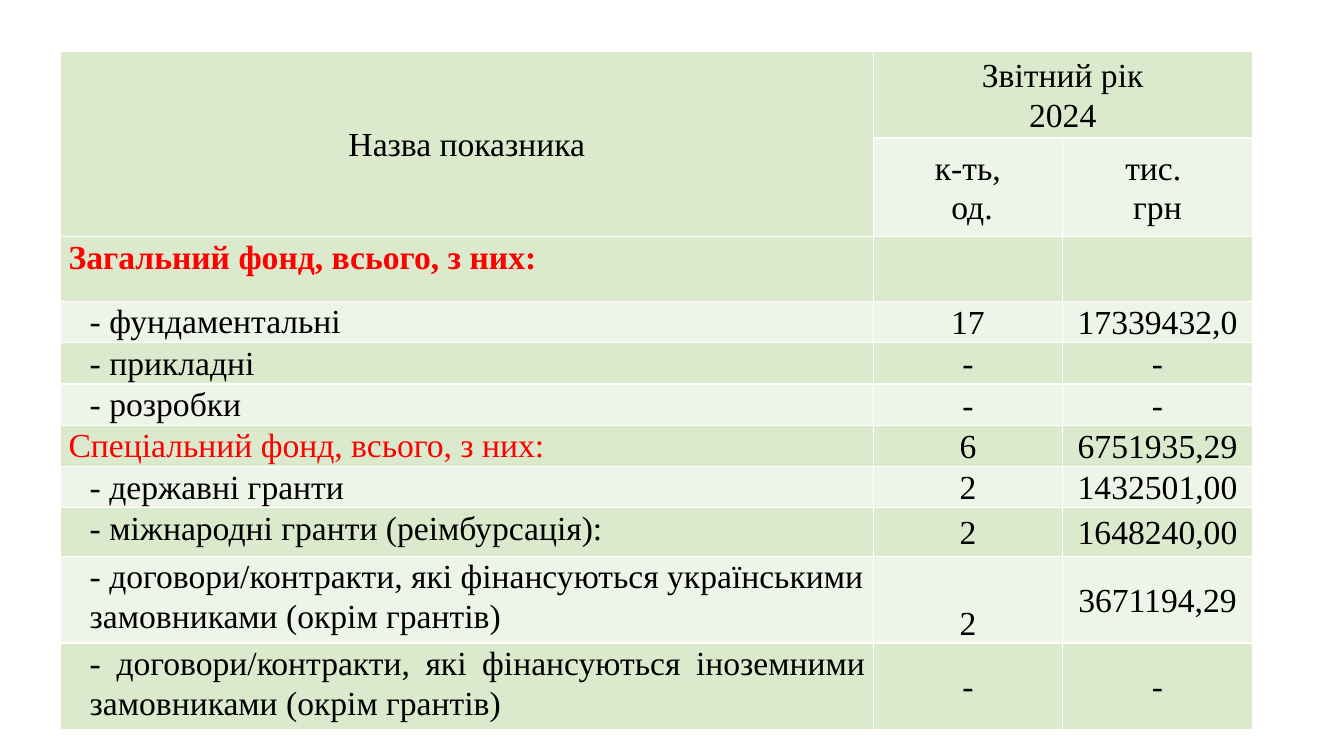
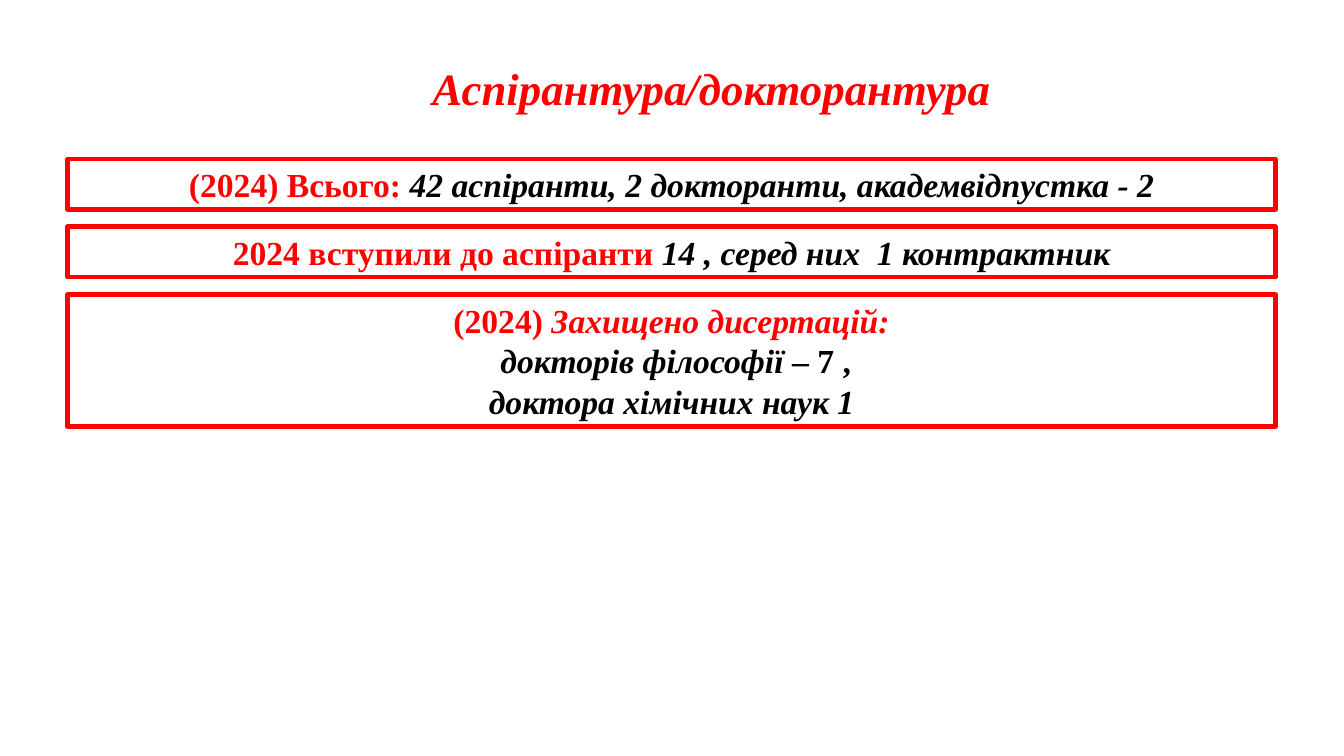
from lxml.etree import SubElement
from pptx import Presentation
from pptx.dml.color import RGBColor
from pptx.enum.shapes import MSO_SHAPE
from pptx.enum.text import MSO_ANCHOR, PP_ALIGN
from pptx.oxml.ns import qn
from pptx.util import Inches, Pt

COLORS = {"text": "000000", "accent": "FF0000", "border": "FFFFFF",
          "dark": "DBE9CD", "light": "EEF4E8"}
CENTER, LEFT, JUSTIFY = PP_ALIGN.CENTER, PP_ALIGN.LEFT, PP_ALIGN.JUSTIFY


def rgb(name):
    return RGBColor.from_string(COLORS[name])


class Deck:
    """Holds the shared style and the current slide."""
    font = "Times New Roman"
    size = 24

    def __init__(self):
        self.prs = Presentation()
        self.prs.slide_width, self.prs.slide_height = Inches(13.33), Inches(7.5)
        self.s = None

    def new_slide(self):
        self.s = self.prs.slides.add_slide(self.prs.slide_layouts[6])

    def add_text(self, tf, paragraphs, align=CENTER, size=None, spacing=None):
        """Each paragraph is a list of (text, color, style); style holds b and i."""
        for n, runs in enumerate(paragraphs):
            p = tf.paragraphs[0] if n == 0 else tf.add_paragraph()
            p.alignment = align
            if spacing:
                p.line_spacing = spacing
            for text, color, style in runs:
                r = p.add_run()
                r.text = text
                r.font.name, r.font.size = self.font, Pt(size or self.size)
                r.font.color.rgb = rgb(color)
                r.font.bold, r.font.italic = "b" in style, "i" in style

    def title(self, text, left, top, width, height):
        sp = self.s.shapes.add_textbox(*map(Inches, (left, top, width, height)))
        sp.text_frame.word_wrap = False
        self.add_text(sp.text_frame, [[(text, "accent", "bi")]], LEFT, size=32)

    def box(self, paragraphs, left, top, width, height):
        sp = self.s.shapes.add_shape(
            MSO_SHAPE.RECTANGLE, *map(Inches, (left, top, width, height)))
        sp.shadow.inherit = False
        sp.fill.background()
        sp.line.color.rgb = rgb("accent")
        sp.line.width = Pt(3.25)
        sp.text_frame.word_wrap = True
        self.add_text(sp.text_frame, paragraphs)

    def table(self, left, top, widths, heights):
        """Adds an empty table with banded rows and white borders."""
        frame = self.s.shapes.add_table(
            len(heights), len(widths), Inches(left), Inches(top),
            Inches(sum(widths)), Inches(sum(heights)))
        table = frame.table
        table.first_row = table.horz_banding = False
        for column, width in zip(table.columns, widths):
            column.width = Inches(width)
        for n, (row, height) in enumerate(zip(table.rows, heights)):
            row.height = Inches(height)
            for cell in row.cells:
                self.borders(cell)
                cell.fill.solid()
                cell.fill.fore_color.rgb = rgb("light" if n % 2 else "dark")
        return table

    def borders(self, cell):
        tc_pr = cell._tc.get_or_add_tcPr()
        for side in ("lnL", "lnR", "lnT", "lnB"):
            ln = SubElement(tc_pr, qn("a:" + side), w=str(Pt(1)))
            fill = SubElement(ln, qn("a:solidFill"))
            SubElement(fill, qn("a:srgbClr"), val=COLORS["border"])

    def cell(self, cell, lines, align=CENTER, anchor=MSO_ANCHOR.MIDDLE,
             margin=0.08, indent=0, color="text", style=""):
        cell.vertical_anchor = anchor
        cell.margin_left = cell.margin_right = Inches(margin)
        cell.margin_top = cell.margin_bottom = 0
        self.add_text(cell.text_frame, [[(line, color, style)] for line in lines],
                      align, spacing=1.07)
        if indent:
            for p in cell.text_frame.paragraphs:
                p_pr = p._p.get_or_add_pPr()
                p_pr.set("marL", str(Inches(indent)))
                p_pr.set("indent", "0")


# Indicator, count, amount
FUNDING = [
    ("Загальний фонд, всього, з них:", "", ""),
    ("- фундаментальні", "17", "17339432,0"),
    ("- прикладні", "-", "-"),
    ("- розробки", "-", "-"),
    ("Спеціальний фонд, всього, з них:", "6", "6751935,29"),
    ("- державні гранти", "2", "1432501,00"),
    ("- міжнародні гранти (реімбурсація):", "2", "1648240,00"),
    ("- договори/контракти, які фінансуються українськими замовниками "
     "(окрім грантів)", "2", "3671194,29"),
    ("- договори/контракти, які фінансуються іноземними замовниками "
     "(окрім грантів)", "-", "-"),
]


def funding_slide(deck):
    deck.new_slide()
    heights = [0.86, 0.98, 0.64] + [0.41] * 5 + [0.48, 0.86, 0.86]
    table = deck.table(0.6, 0.51, [8.06, 1.88, 1.88], heights)

    # Two-level header
    table.cell(0, 0).merge(table.cell(1, 0))
    table.cell(0, 1).merge(table.cell(0, 2))
    deck.cell(table.cell(0, 0), ["Назва показника"])
    deck.cell(table.cell(0, 1), ["Звітний рік", "2024"])
    deck.cell(table.cell(1, 1), ["к-ть,", " од."])
    deck.cell(table.cell(1, 2), ["тис. ", "грн"])

    # Funds in red, their parts indented
    last = len(heights) - 1
    for n, (name, *values) in enumerate(FUNDING, start=2):
        is_part = name.startswith("-")
        deck.cell(table.cell(n, 0), [name], JUSTIFY if n == last else LEFT,
                  MSO_ANCHOR.TOP, indent=0.21 if is_part else 0,
                  color="text" if is_part else "accent",
                  style="b" if n == 2 else "")
        for column, value in enumerate(values, start=1):
            if value:
                deck.cell(table.cell(n, column), [value], margin=0.03)
    table.cell(last - 1, 1).vertical_anchor = MSO_ANCHOR.BOTTOM


def postgraduate_slide(deck):
    deck.new_slide()
    deck.title("Аспірантура/докторантура", 4.19, 0.55, 5.79, 0.64)

    # Stacked boxes with equal gaps
    boxes = [
        (0.5, [[("(2024) Всього: ", "accent", "b"),
                ("42 аспіранти, 2 докторанти, академвідпустка - 2", "text", "bi")]]),
        (0.5, [[("2024 вступили до аспіранти ", "accent", "b"),
                ("14 , серед них  1 контрактник", "text", "bi")]]),
        (1.31, [[("(2024) ", "accent", "b"),
                 ("Захищено дисертацій:", "accent", "bi")],
                [(" докторів філософії ", "text", "bi"), ("– 7 ,", "text", "b")],
                [("доктора хімічних наук 1", "text", "bi")]]),
    ]
    top, gap = 1.58, 0.17
    for height, paragraphs in boxes:
        deck.box(paragraphs, 0.67, top, 11.98, height)
        top += height + gap


def main():
    deck = Deck()
    funding_slide(deck)
    postgraduate_slide(deck)
    deck.prs.save("out.pptx")


if __name__ == "__main__":
    main()
